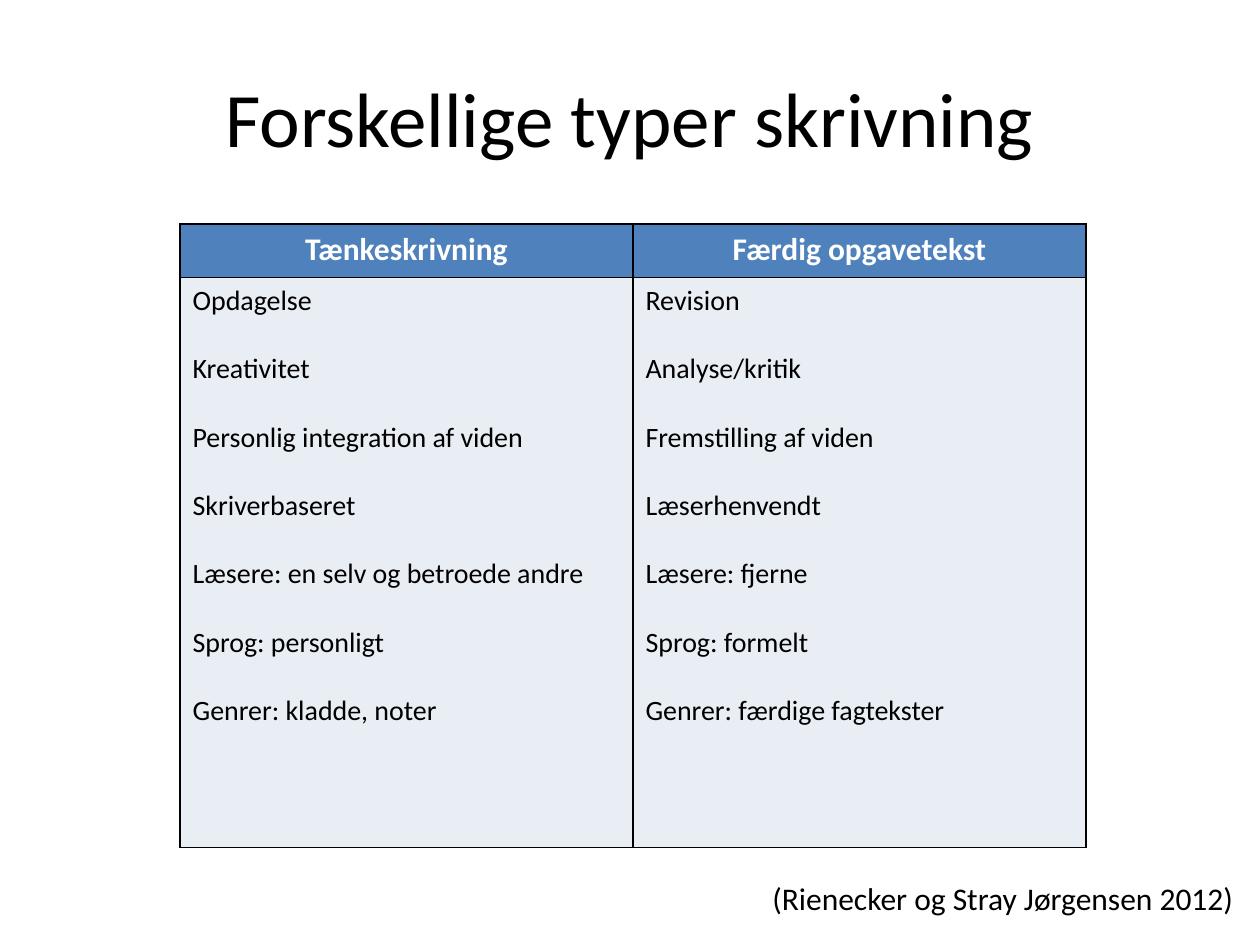
from lxml.etree import SubElement
from pptx import Presentation
from pptx.dml.color import RGBColor
from pptx.enum.text import MSO_ANCHOR as Anchor, PP_ALIGN as Align
from pptx.oxml.ns import qn
from pptx.util import Cm, Pt

FONT = "Calibri"
BLACK = RGBColor(0x00, 0x00, 0x00)
WHITE = RGBColor(0xFF, 0xFF, 0xFF)
HEADER_BLUE = RGBColor(0x4F, 0x81, 0xBD)
BODY_BLUE = RGBColor(0xE9, 0xED, 0xF4)
ROW_GAP = Pt(19.5)  # one blank line between the points

COLUMNS = {
    "Tænkeskrivning": [
        "Opdagelse",
        "Kreativitet",
        "Personlig integration af viden",
        "Skriverbaseret",
        "Læsere: en selv og betroede andre",
        "Sprog: personligt",
        "Genrer: kladde, noter",
    ],
    "Færdig opgavetekst": [
        "Revision",
        "Analyse/kritik",
        "Fremstilling af viden",
        "Læserhenvendt",
        "Læsere: fjerne",
        "Sprog: formelt",
        "Genrer: færdige fagtekster",
    ],
}


def add_run(p, text, size, color=BLACK, bold=False):
    r = p.add_run()
    r.text = text
    r.font.name = FONT
    r.font.size = Pt(size)
    r.font.bold = bold
    r.font.color.rgb = color


def add_title(slide, text):
    sp = slide.shapes.title
    sp.left, sp.top, sp.width, sp.height = Cm(1.27), Cm(0.76), Cm(22.86), Cm(3.18)
    tf = sp.text_frame
    tf.vertical_anchor = Anchor.MIDDLE
    p = tf.paragraphs[0]
    p.alignment = Align.CENTER
    add_run(p, text, 44)


def style_cell(cell, fill):
    # Borders come before the fill in the cell properties
    tc_pr = cell._tc.get_or_add_tcPr()
    for side in ("a:lnL", "a:lnR", "a:lnT", "a:lnB"):
        ln = SubElement(tc_pr, qn(side), w=str(Pt(1)))
        SubElement(SubElement(ln, qn("a:solidFill")), qn("a:srgbClr"), val=str(BLACK))
    cell.fill.solid()
    cell.fill.fore_color.rgb = fill


def add_comparison(slide, columns):
    frame = slide.shapes.add_table(2, len(columns), Cm(3.63), Cm(4.52), Cm(18.26), Cm(12.56))
    table = frame.table
    table.rows[0].height, table.rows[1].height = Cm(1.07), Cm(11.49)
    for i, (heading, points) in enumerate(columns.items()):
        table.columns[i].width = Cm(9.13)

        # Heading
        cell = table.cell(0, i)
        style_cell(cell, HEADER_BLUE)
        p = cell.text_frame.paragraphs[0]
        p.alignment = Align.CENTER
        add_run(p, heading, 18, WHITE, bold=True)

        # Points
        cell = table.cell(1, i)
        style_cell(cell, BODY_BLUE)
        tf = cell.text_frame
        for n, point in enumerate(points):
            p = tf.add_paragraph() if n else tf.paragraphs[0]
            if n:
                p.space_before = ROW_GAP
            add_run(p, point, 16)


def add_source(slide, text):
    sp = slide.shapes.add_textbox(Cm(15.32), Cm(17.6), Cm(10.08), Cm(1.8))
    tf = sp.text_frame
    tf.word_wrap = True
    add_run(tf.paragraphs[0], text, 18)


def main():
    prs = Presentation()
    prs.slide_width, prs.slide_height = Cm(25.4), Cm(19.05)
    slide = prs.slides.add_slide(prs.slide_layouts[5])  # title only
    add_title(slide, "Forskellige typer skrivning")
    add_comparison(slide, COLUMNS)
    add_source(slide, "(Rienecker og Stray Jørgensen 2012)")
    prs.save("out.pptx")


if __name__ == "__main__":
    main()
